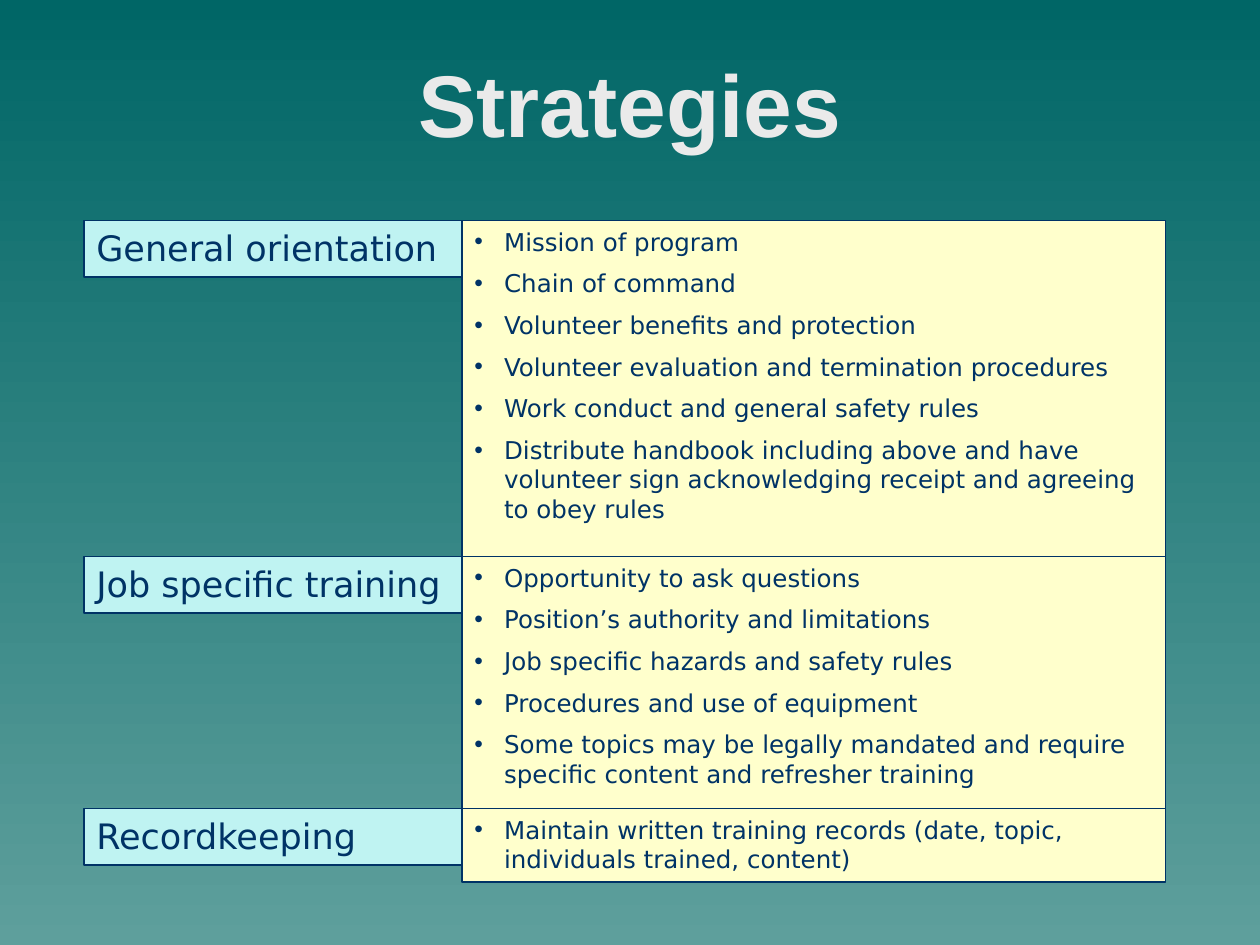
from lxml.etree import SubElement
from pptx import Presentation
from pptx.dml.color import RGBColor
from pptx.enum.shapes import MSO_SHAPE
from pptx.enum.text import MSO_ANCHOR, PP_ALIGN
from pptx.oxml.ns import qn
from pptx.util import Pt

TEAL = RGBColor(0x00, 0x66, 0x66)
PALE_TEAL = RGBColor(0x5E, 0x9F, 0x9C)
WHITE = RGBColor(0xEA, 0xEA, 0xEA)
NAVY = RGBColor(0x00, 0x33, 0x66)
AQUA = RGBColor(0xBF, 0xF3, 0xF2)
CREAM = RGBColor(0xFF, 0xFF, 0xCC)

LEFT, LABEL_W, LABEL_H, DETAIL_W = 48, 216, 32.4, 402

STRATEGIES = [
    (126, 209.5, "General orientation", [
        "Mission of program",
        "Chain of command",
        "Volunteer benefits and protection",
        "Volunteer evaluation and termination procedures",
        "Work conduct and general safety rules",
        "Distribute handbook including above and have volunteer sign "
        "acknowledging receipt and agreeing to obey rules",
    ]),
    (318, 167, "Job specific training", [
        "Opportunity to ask questions",
        "Position’s authority and limitations",
        "Job specific hazards and safety rules",
        "Procedures and use of equipment",
        "Some topics may be legally mandated and require specific content "
        "and refresher training",
    ]),
    (462, 42, "Recordkeeping", [
        "Maintain written training records (date, topic, individuals "
        "trained, content)",
    ]),
]


def add_run(p, text, size, color, font="DejaVu Sans", bold=False):
    """Add one styled run to a paragraph."""
    r = p.add_run()
    r.text = text
    r.font.name, r.font.size, r.font.bold = font, Pt(size), bold
    r.font.color.rgb = color


def add_background(s):
    """Fill the slide with a gradient from top to bottom."""
    fill = s.background.fill
    fill.gradient()
    fill.gradient_angle = 270
    for stop, color, position in zip(fill.gradient_stops, (TEAL, PALE_TEAL), (0, 1)):
        stop.color.rgb = color
        stop.position = position


def add_title(s, x, y, w, h, text):
    """Place the centred slide title."""
    tf = s.shapes.add_textbox(Pt(x), Pt(y), Pt(w), Pt(h)).text_frame
    tf.word_wrap = True
    tf.vertical_anchor = MSO_ANCHOR.MIDDLE
    p = tf.paragraphs[0]
    p.alignment = PP_ALIGN.CENTER
    add_run(p, text, 50, WHITE, "Arial", True)


def add_panel(s, x, y, w, h, color):
    """Place an outlined rectangle and return its text frame."""
    sp = s.shapes.add_shape(MSO_SHAPE.RECTANGLE, Pt(x), Pt(y), Pt(w), Pt(h))
    sp.shadow.inherit = False
    sp.fill.solid()
    sp.fill.fore_color.rgb = color
    sp.line.color.rgb = NAVY
    sp.line.width = Pt(1)
    tf = sp.text_frame
    tf.word_wrap = True
    tf.vertical_anchor = MSO_ANCHOR.TOP
    return tf


def add_label(s, x, y, w, h, text):
    """Place the name of a strategy."""
    p = add_panel(s, x, y, w, h, AQUA).paragraphs[0]
    p.alignment = PP_ALIGN.LEFT
    add_run(p, text, 20, NAVY)


def add_details(s, x, y, w, h, items):
    """Place the bulleted details of a strategy."""
    tf = add_panel(s, x, y, w, h, CREAM)
    for i, item in enumerate(items):
        p = tf.add_paragraph() if i else tf.paragraphs[0]
        p.alignment = PP_ALIGN.LEFT
        if i:
            p.space_before = Pt(7)
        pPr = p._p.get_or_add_pPr()
        pPr.set("marL", str(Pt(17)))
        pPr.set("indent", str(-Pt(17)))
        SubElement(pPr, qn("a:buFont"), typeface="Arial")
        SubElement(pPr, qn("a:buChar"), char="•")
        add_run(p, item, 14, NAVY)


def main():
    """Build and save the slide."""
    prs = Presentation()
    prs.slide_width, prs.slide_height = Pt(720), Pt(540)
    s = prs.slides.add_slide(prs.slide_layouts[6])
    add_background(s)
    add_title(s, 36, 21.6, 648, 74.2, "Strategies")
    for y, _, label, _ in STRATEGIES:
        add_label(s, LEFT, y, LABEL_W, LABEL_H, label)
    for y, h, _, items in STRATEGIES:
        add_details(s, LEFT + LABEL_W, y, DETAIL_W, h, items)
    prs.save("out.pptx")


if __name__ == "__main__":
    main()
